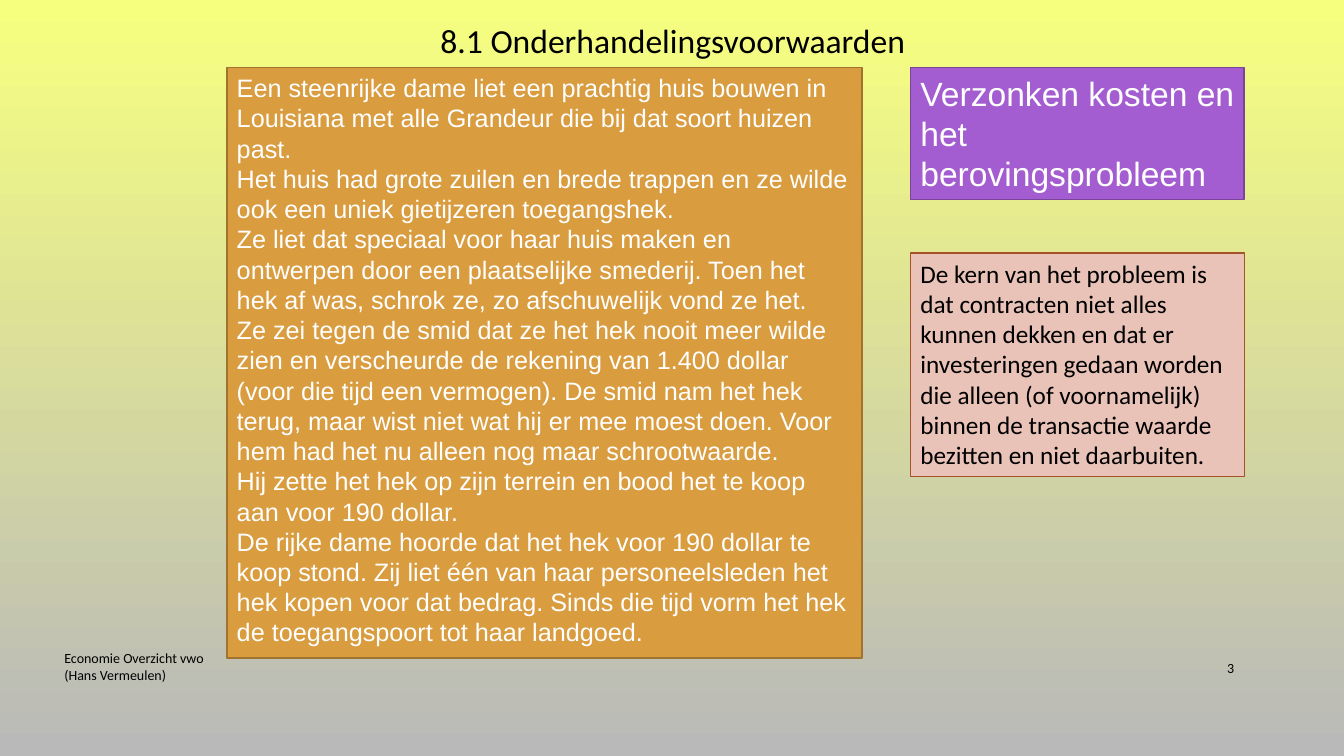
import pptx
import pptx.util
from pptx.dml.color import RGBColor
from pptx.enum.shapes import MSO_SHAPE
from pptx.enum.text import MSO_ANCHOR, MSO_AUTO_SIZE, PP_ALIGN

Inches = pptx.util.Inches
Pt = pptx.util.Pt

BLACK = RGBColor(0x00, 0x00, 0x00)
WHITE = RGBColor(0xFF, 0xFF, 0xFF)
YELLOW = RGBColor(0xF7, 0xFF, 0x7F)
GREY = RGBColor(0xB9, 0xB9, 0xB9)
ORANGE = RGBColor(0xD9, 0x9C, 0x3F)
BROWN = RGBColor(0xA1, 0x73, 0x2F)
PURPLE = RGBColor(0xA3, 0x5D, 0xD1)
DARK_PURPLE = RGBColor(0x79, 0x45, 0x9B)
PINK = RGBColor(0xE9, 0xC2, 0xB8)
RUST = RGBColor(0xA5, 0x52, 0x29)

TITLE = ["8.1 Onderhandelingsvoorwaarden"]
STORY = [
    "Een steenrijke dame liet een prachtig huis bouwen in Louisiana met alle Grandeur die bij dat soort huizen past.",
    "Het huis had grote zuilen en brede trappen en ze wilde ook een uniek gietijzeren toegangshek.",
    "Ze liet dat speciaal voor haar huis maken en ontwerpen door een plaatselijke smederij. Toen het hek af was, "
    "schrok ze, zo afschuwelijk vond ze het.",
    "Ze zei tegen de smid dat ze het hek nooit meer wilde zien en verscheurde de rekening van 1.400 dollar "
    "(voor die tijd een vermogen). De smid nam het hek terug, maar wist niet wat hij er mee moest doen. "
    "Voor hem had het nu alleen nog maar schrootwaarde.",
    "Hij zette het hek op zijn terrein en bood het te koop aan voor 190 dollar.",
    "De rijke dame hoorde dat het hek voor 190 dollar te koop stond. Zij liet één van haar personeelsleden het hek "
    "kopen voor dat bedrag. Sinds die tijd vorm het hek de toegangspoort tot haar landgoed.",
]
TOPIC = ["Verzonken kosten en het berovingsprobleem"]
CORE = [
    "De kern van het probleem is dat contracten niet alles kunnen dekken en dat er investeringen gedaan worden "
    "die alleen (of voornamelijk) binnen de transactie waarde bezitten en niet daarbuiten."
]
FOOTER = ["Economie Overzicht vwo (Hans Vermeulen)"]
PAGE_NUMBER = ["3"]

PANEL_TOP = 0.67
SIDE_LEFT, SIDE_WIDTH = 9.03, 3.31

# text, (left, top, width, height), font, size, colour
TEXT_BOXES = [
    (FOOTER, (0.54, 6.41, 1.71, 0.4), {"anchor": MSO_ANCHOR.MIDDLE}, PP_ALIGN.LEFT, 10),
    (PAGE_NUMBER, (11.5, 6.43, 0.84, 0.4), {"anchor": MSO_ANCHOR.MIDDLE}, PP_ALIGN.RIGHT, 10),
    (TITLE, (4.27, 0.15, 6.24, 0.5), {"anchor": MSO_ANCHOR.TOP}, PP_ALIGN.LEFT, 24),
]
# text, (left, top, width, height), fill, line, line width, font format
PANELS = [
    (STORY, (2.25, PANEL_TOP, 6.3, 5.86), ORANGE, BROWN, 1.25, ("Arial", 18, WHITE)),
    (TOPIC, (SIDE_LEFT, PANEL_TOP, SIDE_WIDTH, 1.31), PURPLE, DARK_PURPLE, 1.25, ("Arial", 24, WHITE)),
    (CORE, (SIDE_LEFT, 2.51, SIDE_WIDTH, 2.22), PINK, RUST, 0.75, ("Calibri", 18, BLACK)),
]


def write_text(shape, lines, frame_format, alignment, font_format):
    frame = shape.text_frame
    frame.text = "\n".join(lines)
    for name, value in {"word_wrap": True, **frame_format}.items():
        setattr(frame, name, value)
    font_name, size, colour = font_format
    for paragraph in frame.paragraphs:
        paragraph.alignment = alignment
        for name, value in {"name": font_name, "size": Pt(size)}.items():
            setattr(paragraph.font, name, value)
        paragraph.font.color.rgb = colour


def add_panel(slide, lines, box, fill, line, line_width, font_format):
    shape = slide.shapes.add_shape(MSO_SHAPE.RECTANGLE, *map(Inches, box))
    shape.shadow.inherit = False
    shape.fill.solid()
    shape.fill.fore_color.rgb = fill
    shape.line.color.rgb = line
    shape.line.width = Pt(line_width)
    frame_format = {"vertical_anchor": MSO_ANCHOR.TOP, "auto_size": MSO_AUTO_SIZE.SHAPE_TO_FIT_TEXT}
    write_text(shape, lines, frame_format, PP_ALIGN.LEFT, font_format)


def add_label(slide, lines, box, options, alignment, size):
    shape = slide.shapes.add_textbox(*map(Inches, box))
    frame_format = {"vertical_anchor": options["anchor"]}
    write_text(shape, lines, frame_format, alignment, ("Calibri", size, BLACK))


def paint_background(slide):
    fill = slide.background.fill
    fill.gradient()
    fill.gradient_angle = 270
    for stop, colour, position in zip(fill.gradient_stops, (YELLOW, GREY), (0, 1)):
        stop.color.rgb = colour
        stop.position = position


def main():
    presentation = pptx.Presentation()
    presentation.slide_width = Inches(13.33)
    presentation.slide_height = Inches(7.5)
    slide = presentation.slides.add_slide(presentation.slide_layouts[6])
    paint_background(slide)
    for panel in PANELS:
        add_panel(slide, *panel)
    for label in TEXT_BOXES:
        add_label(slide, *label)
    presentation.save("out.pptx")


if __name__ == "__main__":
    main()
